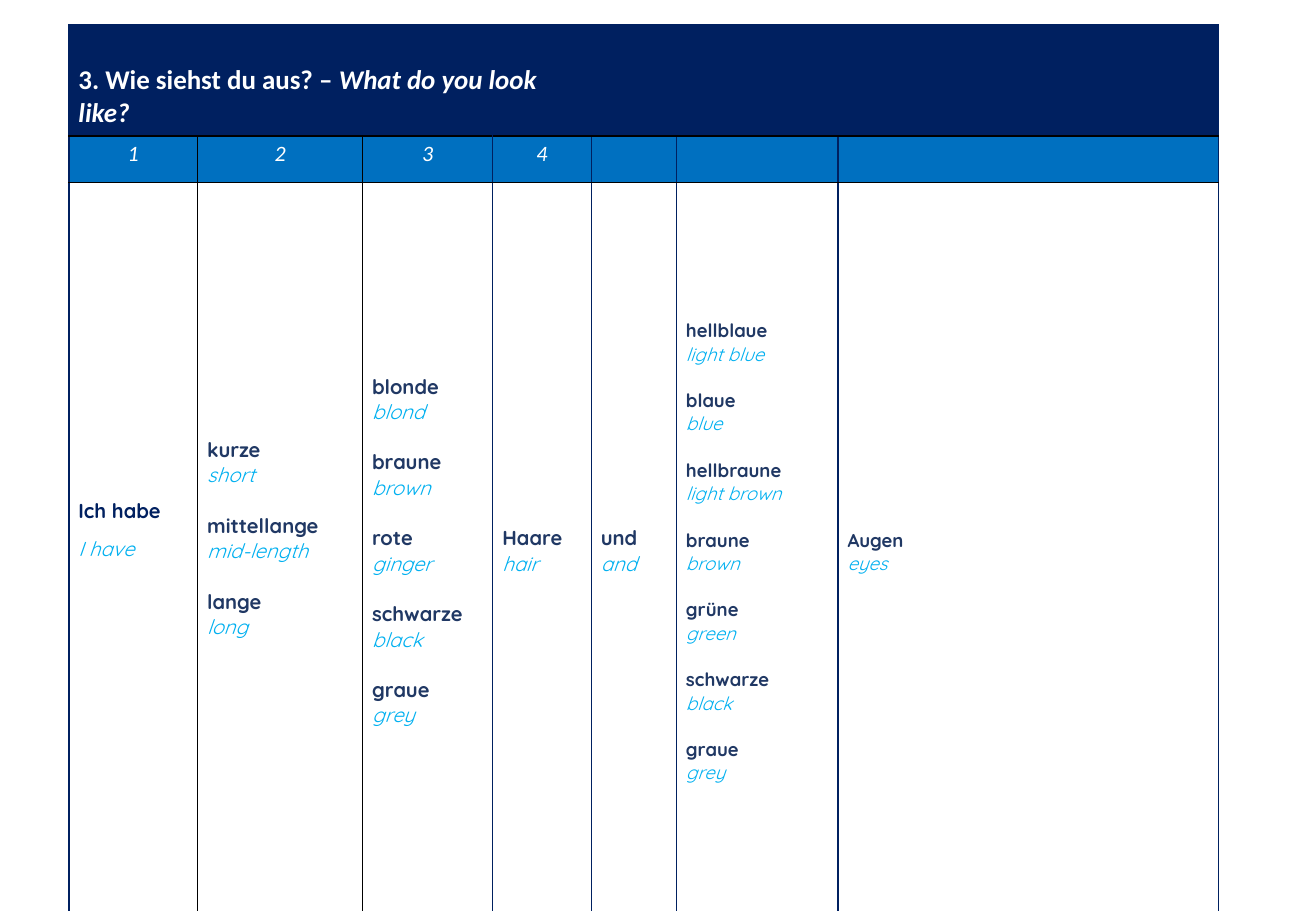
import dataclasses

import lxml.etree
import pptx
import pptx.dml.color
import pptx.enum.text
import pptx.oxml.ns
import pptx.util
from pptx.util import Cm, Pt


@dataclasses.dataclass(frozen=True)
class Theme:
    navy: str = "002060"
    blue: str = "0070C0"
    german: str = "203864"
    english: str = "00B0F0"
    white: str = "FFFFFF"
    black: str = "000000"
    heading_font: str = "Calibri"
    word_font: str = "Quicksand"
    title_size: float = 16
    number_size: float = 13
    word_size: float = 12
    small_size: float = 11
    quicksand_line: float = 1.25


@dataclasses.dataclass(frozen=True)
class WordColumn:
    """One column: its width and the room kept below its words, both in cm."""
    width: float
    pairs: tuple
    room_below: float = 0.53
    size: float = Theme.word_size
    colour: str = Theme.german
    line_spacing: float = 1.0


THEME = Theme()
COLUMNS = (
    WordColumn(2.69, (("Ich habe", "I have"),), 1.67,
               colour=THEME.navy, line_spacing=1.5),
    WordColumn(3.45, (("kurze", "short"), ("mittellange", "mid-length"),
                      ("lange", "long")), 1.06),
    WordColumn(2.72, (("blonde", "blond"), ("braune", "brown"),
                      ("rote", "ginger"), ("schwarze", "black"),
                      ("graue", "grey"))),
    WordColumn(2.06, (("Haare", "hair"),)),
    WordColumn(1.78, (("und", "and"),)),
    WordColumn(3.38, (("hellblaue", "light blue"), ("blaue", "blue"),
                      ("hellbraune", "light brown"), ("braune", "brown"),
                      ("grüne", "green"), ("schwarze", "black"),
                      ("graue", "grey")), 0.49, THEME.small_size),
    WordColumn(7.95, (("Augen", "eyes"),), 0.49, THEME.small_size),
)
NUMBERED_COLUMNS = 4
ROW_HEIGHTS = (1.55, 0.98, 15.93)
MIDDLE = pptx.enum.text.MSO_ANCHOR.MIDDLE


def add_run(paragraph, text, font_name, size, colour, bold=False, italic=False):
    run = paragraph.add_run()
    run.text = text
    run.font.name = font_name
    run.font.size = Pt(size)
    run.font.bold = bold
    run.font.italic = italic
    run.font.color.rgb = pptx.dml.color.RGBColor.from_string(colour)


def set_margins(cell, top=0.1, bottom=0.1):
    cell.margin_left = cell.margin_right = Cm(0.2)
    cell.margin_top = Cm(top)
    cell.margin_bottom = Cm(bottom)


def set_fill(cell, colour):
    cell.fill.solid()
    cell.fill.fore_color.rgb = pptx.dml.color.RGBColor.from_string(colour)


def set_borders(cell, left, right, top, bottom):
    qn = pptx.oxml.ns.qn
    properties = cell._tc.get_or_add_tcPr()
    sides = {"a:lnL": left, "a:lnR": right, "a:lnT": top, "a:lnB": bottom}
    for position, (tag, colour) in enumerate(sides.items()):
        line = lxml.etree.Element(qn(tag), w=str(Pt(1)))
        solid = lxml.etree.SubElement(line, qn("a:solidFill"))
        lxml.etree.SubElement(solid, qn("a:srgbClr"), val=colour)
        properties.insert(position, line)


def add_grid(slide):
    width = sum(column.width for column in COLUMNS)
    table = slide.shapes.add_table(
        len(ROW_HEIGHTS), len(COLUMNS), Cm(1.44), Cm(0.52),
        Cm(width), Cm(sum(ROW_HEIGHTS))).table
    table.first_row = False
    table.horz_banding = False
    for grid_column, column in zip(table.columns, COLUMNS):
        grid_column.width = Cm(column.width)
    for row, height in zip(table.rows, ROW_HEIGHTS):
        row.height = Cm(height)
    return table


def draw_borders(table):
    """Black rules flank the second column; the other uprights are navy."""
    for row_index, row in enumerate(table.rows):
        for index, cell in enumerate(row.cells):
            in_title = row_index == 0
            uprights = [THEME.black if edge in (1, 2) and not in_title
                        else THEME.navy for edge in (index, index + 1)]
            top = THEME.navy if in_title else THEME.black
            set_borders(cell, *uprights, top, THEME.black)


def fill_title(table):
    for index in range(len(COLUMNS)):
        set_margins(table.cell(0, index))
        set_fill(table.cell(0, index), THEME.navy)
    title = table.cell(0, 0)
    title.merge(table.cell(0, NUMBERED_COLUMNS - 1))
    set_margins(title, 0.81, 0.13)
    title.vertical_anchor = MIDDLE
    paragraph = title.text_frame.paragraphs[0]
    for text, italic in (("3. Wie siehst du aus? – ", False),
                         ("What do you look like?", True)):
        add_run(paragraph, text, THEME.heading_font, THEME.title_size,
                THEME.white, bold=True, italic=italic)


def fill_numbers(table):
    for index in range(len(COLUMNS)):
        cell = table.cell(1, index)
        set_margins(cell)
        set_fill(cell, THEME.blue)
        if index < NUMBERED_COLUMNS:
            paragraph = cell.text_frame.paragraphs[0]
            paragraph.alignment = pptx.enum.text.PP_ALIGN.CENTER
            add_run(paragraph, str(index + 1), THEME.heading_font,
                    THEME.number_size, THEME.white, italic=True)


def fill_words(cell, column):
    """Stack German words over their English meanings, a line apart."""
    set_margins(cell, bottom=0.1 + column.room_below)
    cell.fill.background()
    cell.vertical_anchor = MIDDLE
    frame = cell.text_frame
    for index, (german, english) in enumerate(column.pairs):
        word = frame.add_paragraph() if index else frame.paragraphs[0]
        if index:
            word.space_before = Pt(column.size * THEME.quicksand_line)
        meaning = frame.add_paragraph()
        word.line_spacing = meaning.line_spacing = column.line_spacing
        add_run(word, german, THEME.word_font, column.size,
                column.colour, bold=True)
        add_run(meaning, english, THEME.word_font, column.size,
                THEME.english, italic=True)


def main():
    presentation = pptx.Presentation()
    presentation.slide_width = Cm(27.51)
    presentation.slide_height = Cm(19.05)
    slide = presentation.slides.add_slide(presentation.slide_layouts[6])
    table = add_grid(slide)
    fill_title(table)
    fill_numbers(table)
    for index, column in enumerate(COLUMNS):
        fill_words(table.cell(2, index), column)
    draw_borders(table)
    presentation.save("out.pptx")


if __name__ == "__main__":
    main()
